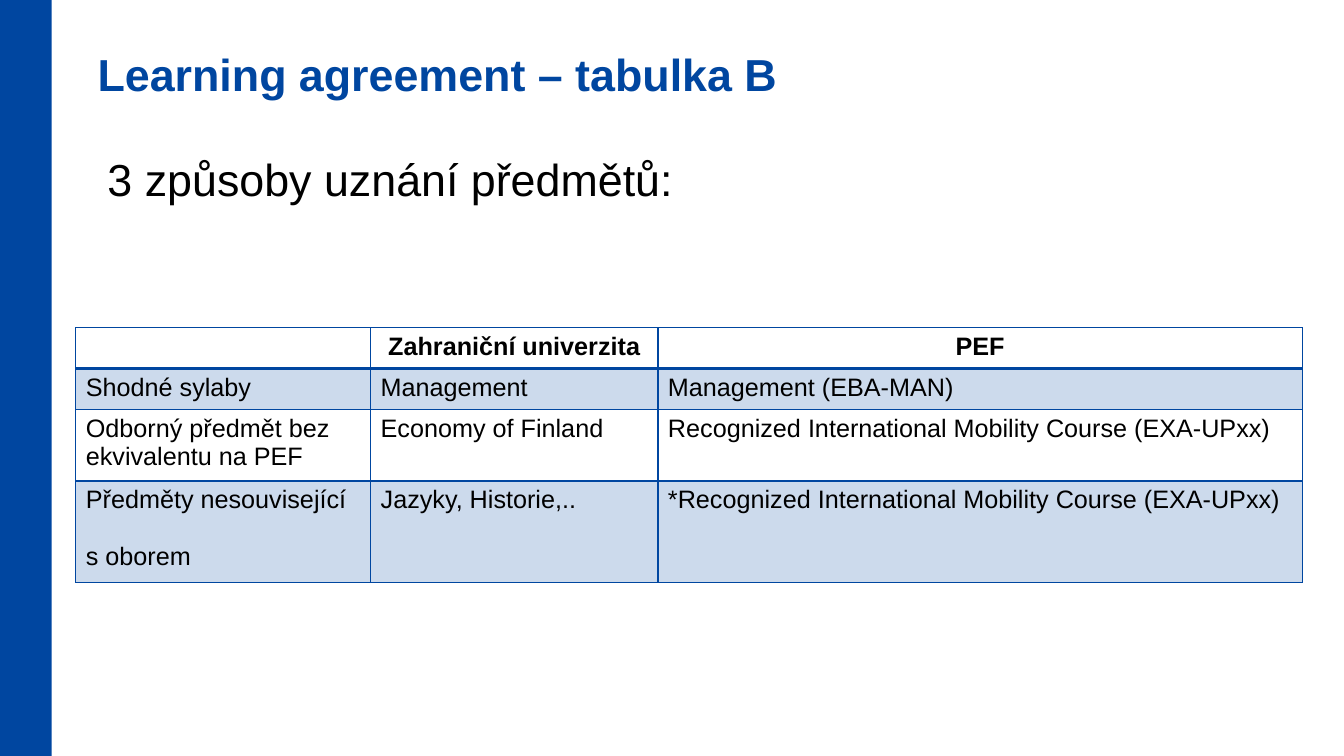
import pptx
import pptx.util
import pptx.dml.color
import pptx.enum.shapes
import pptx.enum.text
import pptx.oxml.ns
import lxml.etree

Cm = pptx.util.Cm
Pt = pptx.util.Pt
BLUE = pptx.dml.color.RGBColor(0x00, 0x46, 0xA0)
BLACK = pptx.dml.color.RGBColor(0x00, 0x00, 0x00)
qn = pptx.oxml.ns.qn


def write(frame, text, size=18, color=BLACK, bold=False, align=None, gap=0):
    frame.word_wrap = True
    for i, line in enumerate(text.split("\n")):
        para = frame.add_paragraph() if i else frame.paragraphs[0]
        if i:
            para.space_before = Pt(gap)
        para.alignment = align
        run = para.add_run()
        run.text = line
        run.font.name = "Arial"
        run.font.size = Pt(size)
        run.font.bold = bold
        run.font.color.rgb = color


def edge(props, side, width):
    line = lxml.etree.SubElement(props, qn("a:ln" + side), w=str(Pt(width)))
    fill = lxml.etree.SubElement(line, qn("a:solidFill"))
    lxml.etree.SubElement(fill, qn("a:srgbClr"), val=str(BLUE))


deck = pptx.Presentation()
deck.slide_width = Cm(33.87)
deck.slide_height = Cm(19.05)
slide = deck.slides.add_slide(deck.slide_layouts[6])
shapes = slide.shapes

band = shapes.add_shape(pptx.enum.shapes.MSO_SHAPE.RECTANGLE, 0, 0, Cm(1.3), Cm(19.05))
band.shadow.inherit = False
band.fill.solid()
band.fill.fore_color.rgb = BLUE
band.line.fill.background()

title = shapes.add_textbox(Cm(2.46), Cm(1.17), Cm(30.38), Cm(1.73)).text_frame
title.margin_left = title.margin_right = title.margin_top = title.margin_bottom = 0
write(title, "Learning agreement – tabulka B", size=32, color=BLUE, bold=True)

intro = shapes.add_textbox(Cm(2.46), Cm(3.71), Cm(30.91), Cm(3)).text_frame
write(intro, "3 způsoby uznání předmětů:", size=32)

rows = [
    ["", "Zahraniční univerzita", "PEF"],
    ["Shodné sylaby", "Management", "Management (EBA-MAN)"],
    ["Odborný předmět bez ekvivalentu na PEF", "Economy of Finland",
     "Recognized International Mobility Course (EXA-UPxx)"],
    ["Předměty nesouvisející\ns oborem", "Jazyky, Historie,..",
     "*Recognized International Mobility Course (EXA-UPxx)"],
]
widths = [7.43, 7.24, 16.24]
heights = [1.03, 1.03, 1.8, 2.55]
table = shapes.add_table(len(rows), len(widths), Cm(1.91), Cm(8.26),
                         Cm(sum(widths)), Cm(sum(heights))).table
table.first_row = True
table.horz_banding = False
for col, width in zip(table.columns, widths):
    col.width = Cm(width)

for r, texts in enumerate(rows):
    table.rows[r].height = Cm(heights[r])
    head = r == 0
    for c, text in enumerate(texts):
        cell = table.cell(r, c)
        align = pptx.enum.text.PP_ALIGN.CENTER if head else None
        write(cell.text_frame, text, bold=head, align=align, gap=20)
        props = cell._tc.get_or_add_tcPr()
        for side in "LRTB":
            thick = (r, side) in [(0, "B"), (1, "T")]
            edge(props, side, 2 if thick else 1)
        if r % 2:
            cell.fill.solid()
            cell.fill.fore_color.rgb = BLUE
            tint = props.find(qn("a:solidFill")).find(qn("a:srgbClr"))
            lxml.etree.SubElement(tint, qn("a:alpha"), val="20000")
        else:
            cell.fill.background()

deck.save("out.pptx")
